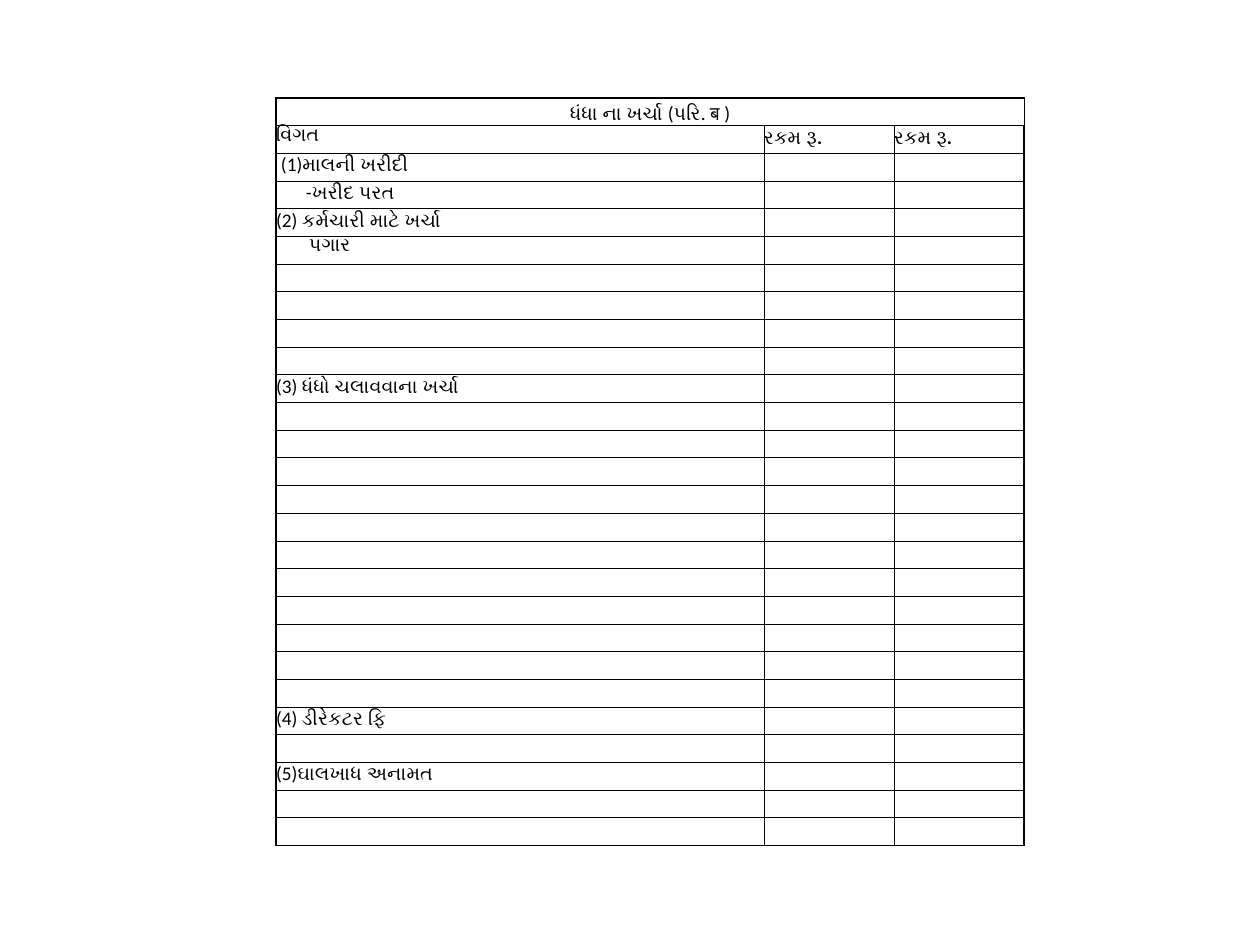
from lxml.etree import SubElement
from pptx import Presentation
from pptx.dml.color import RGBColor
from pptx.enum.text import MSO_ANCHOR, PP_ALIGN
from pptx.oxml.ns import qn
from pptx.util import Emu, Pt

PX = 914400 // 126  # one px in EMU
FONT, SIZE = "Calibri", 11
BLACK = "000000"
LEFT, TOP, HEIGHT = 276, 98, 748
COLUMNS = (488, 130, 130)
ROWS = 27
TITLE = "ધંધા ના ખર્ચા (પરિ. ब )"
HEADINGS = ("વિગત", "રકમ રૂ.", "રકમ રૂ.")
# row: (label, indent in px)
EXPENSES = {
    2: ("(1)માલની ખરીદી", 5),
    3: ("-ખરીદ પરત", 30),
    4: ("(2) કર્મચારી માટે ખર્ચા", 0),
    5: ("પગાર", 33),
    10: ("(3) ધંધો ચલાવવાના ખર્ચા", 0),
    22: ("(4) ડીરેકટર ફિ", 0),
    24: ("(5)ઘાલખાધ અનામત", 0),
}


def px(n):
    return Emu(n * PX)


def color(value):
    return RGBColor.from_string(value)


def set_border(cell, side, width):
    ln = SubElement(cell._tc.get_or_add_tcPr(), qn(f"a:ln{side}"), w=str(Pt(width)))
    fill = SubElement(ln, qn("a:solidFill"))
    SubElement(fill, qn("a:srgbClr"), val=BLACK)


def format_cell(cell, row, col):
    """Thin grid lines, with a heavier left, right and top edge."""
    heavy = {"L": col == 0, "R": col == len(COLUMNS) - 1, "T": row == 0, "B": False}
    for side, is_heavy in heavy.items():
        set_border(cell, side, 1 if is_heavy else 0.5)
    cell.fill.background()
    cell.margin_left = cell.margin_right = cell.margin_top = cell.margin_bottom = 0
    # Keeps empty rows at their height
    SubElement(cell.text_frame.paragraphs[0]._p, qn("a:endParaRPr"), sz=str(SIZE * 100))


def write_cell(cell, text, bold=False, indent=0, align=PP_ALIGN.LEFT):
    cell.margin_left = px(indent)
    p = cell.text_frame.paragraphs[0]
    p.alignment = align
    r = p.add_run()
    r.text = text
    r.font.name, r.font.size, r.font.bold = FONT, Pt(SIZE), bold
    r.font.color.rgb = color(BLACK)


def add_grid(s):
    frame = s.shapes.add_table(ROWS, len(COLUMNS), px(LEFT), px(TOP),
                               px(sum(COLUMNS)), px(HEIGHT))
    table = frame.table
    table.first_row = table.horz_banding = False
    for column, width in zip(table.columns, COLUMNS):
        column.width = px(width)
    for i, row in enumerate(table.rows):
        row.height = Emu(HEIGHT * PX // ROWS)
        for j, cell in enumerate(row.cells):
            format_cell(cell, i, j)
    return table


def main():
    prs = Presentation()
    prs.slide_width, prs.slide_height = px(1260), px(945)
    s = prs.slides.add_slide(prs.slide_layouts[6])
    table = add_grid(s)

    # Title across all columns
    title = table.cell(0, 0)
    title.merge(table.cell(0, len(COLUMNS) - 1))
    title.vertical_anchor = MSO_ANCHOR.BOTTOM
    write_cell(title, TITLE, align=PP_ALIGN.CENTER)

    # Column headings
    for j, heading in enumerate(HEADINGS):
        write_cell(table.cell(1, j), heading, bold=True)

    # Expense labels
    for i, (label, indent) in EXPENSES.items():
        write_cell(table.cell(i, 0), label, indent=indent)

    prs.save("out.pptx")


if __name__ == "__main__":
    main()
